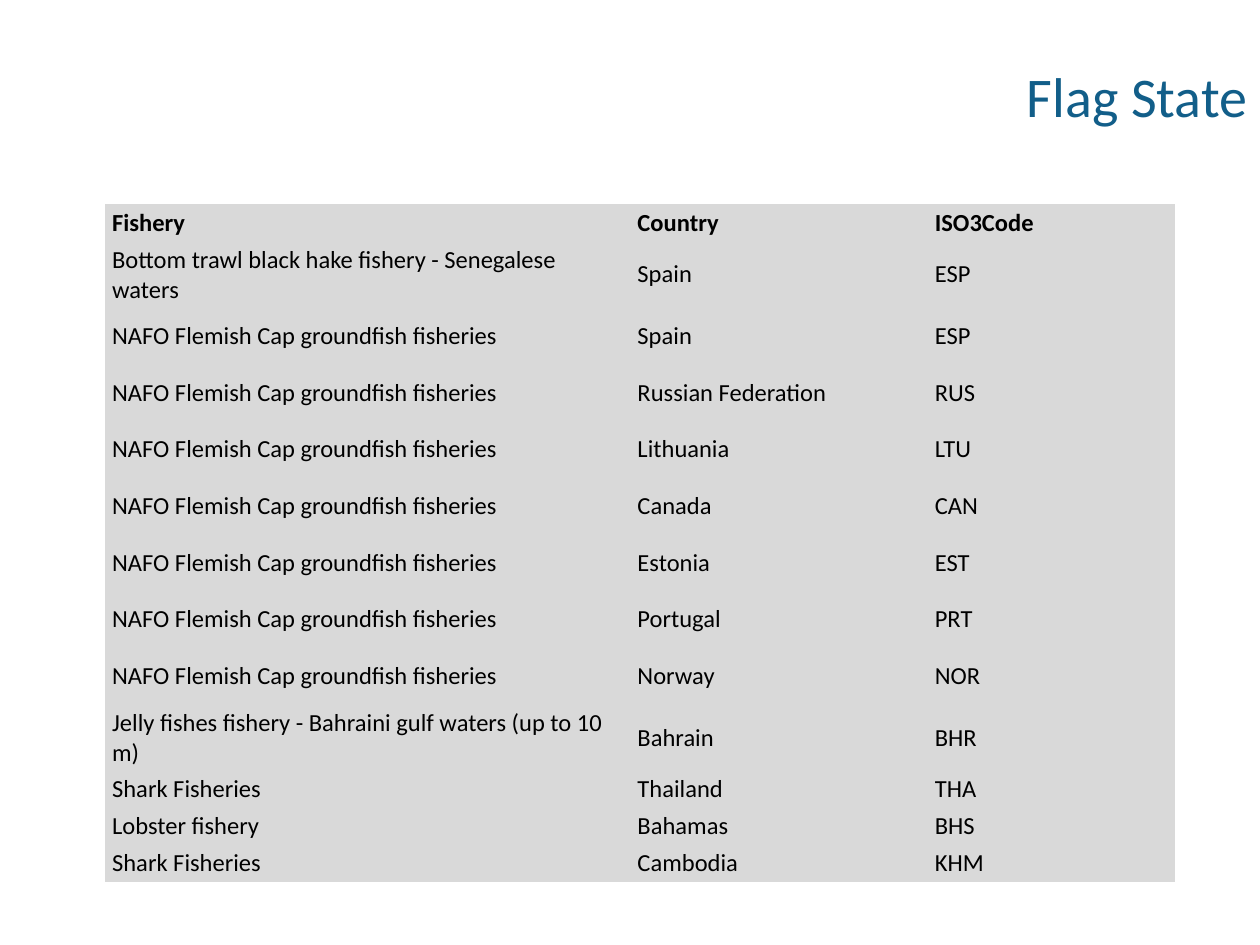
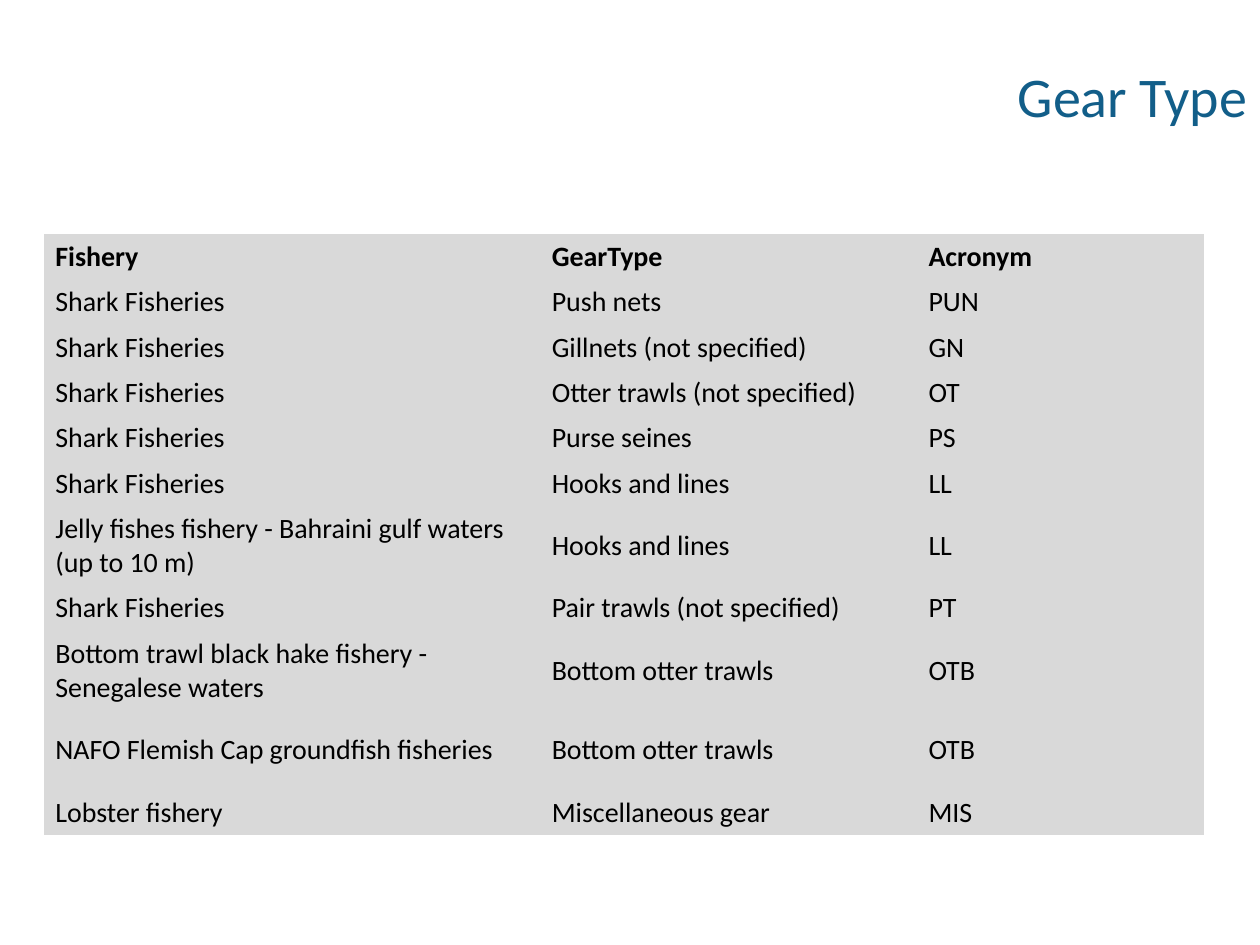
from pptx import Presentation
from pptx.dml.color import RGBColor
from pptx.enum.text import MSO_ANCHOR, PP_ALIGN
from pptx.util import Inches, Pt

MIDDLE = MSO_ANCHOR.MIDDLE
RIGHT = PP_ALIGN.RIGHT

TITLE_BLUE = RGBColor(0x12, 0x5E, 0x89)
BLACK = RGBColor(0x00, 0x00, 0x00)
CELL_GREY = RGBColor(0xD9, 0xD9, 0xD9)
FONT = "Calibri"
NO_GRID_STYLE = "{2D5ABB26-0587-4C30-8999-92F81FD0307C}"

HAKE = "Bottom trawl black hake fishery - Senegalese waters"
NAFO = "NAFO Flemish Cap groundfish fisheries"
JELLY = "Jelly fishes fishery - Bahraini gulf waters (up to 10 m)"
SHARK = "Shark Fisheries"
LOBSTER = "Lobster fishery"

FLAG_STATES = [
    ("Fishery", "Country", "ISO3Code"),
    (HAKE, "Spain", "ESP"),
    (NAFO, "Spain", "ESP"),
    (NAFO, "Russian Federation", "RUS"),
    (NAFO, "Lithuania", "LTU"),
    (NAFO, "Canada", "CAN"),
    (NAFO, "Estonia", "EST"),
    (NAFO, "Portugal", "PRT"),
    (NAFO, "Norway", "NOR"),
    (JELLY, "Bahrain", "BHR"),
    (SHARK, "Thailand", "THA"),
    (LOBSTER, "Bahamas", "BHS"),
    (SHARK, "Cambodia", "KHM"),
]
FLAG_HEIGHTS = {HAKE: 0.45, NAFO: 0.45, JELLY: 0.51}

GEAR_TYPES = [
    ("Fishery", "GearType", "Acronym"),
    (SHARK, "Push nets", "PUN"),
    (SHARK, "Gillnets (not specified)", "GN"),
    (SHARK, "Otter trawls (not specified)", "OT"),
    (SHARK, "Purse seines", "PS"),
    (SHARK, "Hooks and lines", "LL"),
    (JELLY, "Hooks and lines", "LL"),
    (SHARK, "Pair trawls (not specified)", "PT"),
    (HAKE, "Bottom otter trawls", "OTB"),
    (NAFO, "Bottom otter trawls", "OTB"),
    (LOBSTER, "Miscellaneous gear", "MIS"),
]
GEAR_HEIGHTS = {HAKE: 0.63, NAFO: 0.63, JELLY: 0.63}


def add_run(paragraph, text, size, color, bold=False):
    """Append one formatted run to a paragraph."""
    run = paragraph.add_run()
    run.text = text
    run.font.name = FONT
    run.font.size = Pt(size)
    run.font.bold = bold
    run.font.color.rgb = color


def add_titled_slide(presentation, title):
    """Add a blank slide with the shared right-aligned title."""
    slide = presentation.slides.add_slide(presentation.slide_layouts[6])
    box = slide.shapes.add_textbox(Inches(2.83), Inches(0.13), Inches(7.17), Inches(1.25))
    frame = box.text_frame
    frame.word_wrap = True
    frame.vertical_anchor = MIDDLE
    paragraph = frame.paragraphs[0]
    paragraph.alignment = RIGHT
    add_run(paragraph, title, 32, TITLE_BLUE)
    return slide


def fill_cell(cell, text, size, bold, margins):
    """Write one grey table cell with the given side and top margins."""
    side, top = margins
    cell.margin_left = cell.margin_right = Inches(side)
    cell.margin_top = cell.margin_bottom = Inches(top)
    cell.vertical_anchor = MIDDLE
    cell.fill.solid()
    cell.fill.fore_color.rgb = CELL_GREY
    add_run(cell.text_frame.paragraphs[0], text, size, BLACK, bold)


def add_fishery_table(slide, records, left, top, widths, base_height, tall_heights, size, margins):
    """Add a table whose row heights depend on the fishery named in each row."""
    heights = [tall_heights.get(record[0], base_height) for record in records]
    frame = slide.shapes.add_table(
        len(records), len(widths), Inches(left), Inches(top),
        Inches(sum(widths)), Inches(sum(heights)))
    table = frame.table
    table.first_row = False
    table.horz_banding = False
    table._tbl.tblPr.find("{*}tableStyleId").text = NO_GRID_STYLE
    for column, width in zip(table.columns, widths):
        column.width = Inches(width)
    for row_index, (record, height) in enumerate(zip(records, heights)):
        row = table.rows[row_index]
        row.height = Inches(height)
        for cell, text in zip(row.cells, record):
            fill_cell(cell, text, size, row_index == 0, margins)


def main():
    """Build both fishery slides and save the presentation."""
    presentation = Presentation()
    presentation.slide_width = Inches(10)
    presentation.slide_height = Inches(7.5)

    flag_slide = add_titled_slide(presentation, "Flag State")
    add_fishery_table(flag_slide, FLAG_STATES, 0.83, 1.62, (4.17, 2.36, 1.97),
                      0.26, FLAG_HEIGHTS, 14, (0.06, 0.03))

    gear_slide = add_titled_slide(presentation, "Gear Type")
    add_fishery_table(gear_slide, GEAR_TYPES, 0.35, 1.86, (3.94, 2.99, 2.28),
                      0.36, GEAR_HEIGHTS, 16, (0.09, 0.04))

    presentation.save("out.pptx")


if __name__ == "__main__":
    main()
